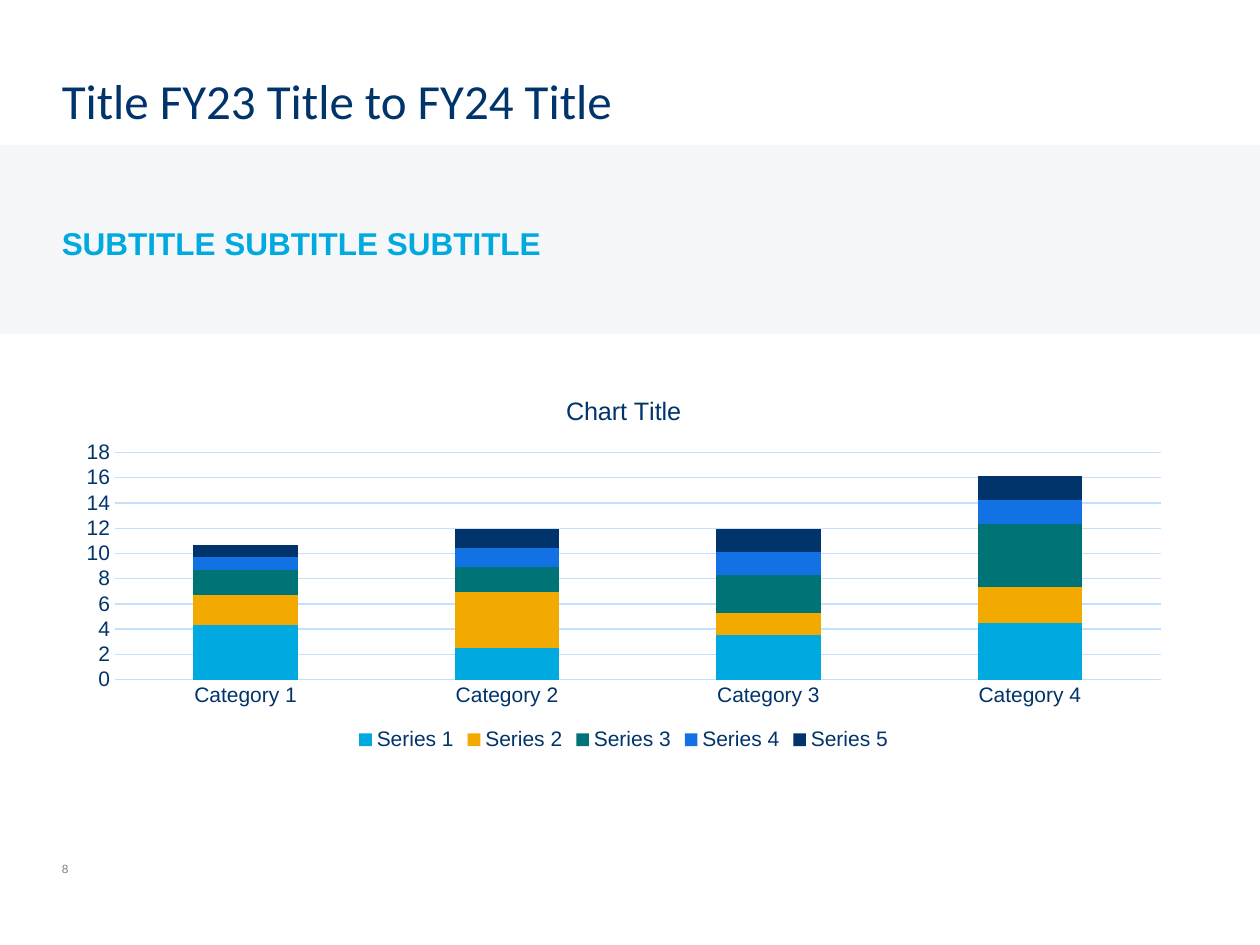
import pptx
import pptx.chart.data
import pptx.dml.color
import pptx.enum.chart
import pptx.enum.shapes
import pptx.enum.text
import pptx.util
from pptx.util import Inches

COLORS = {
    "navy": "00346B",
    "cyan": "00A9E0",
    "amber": "F2A900",
    "teal": "007377",
    "blue": "1271E3",
    "grid": "C3E0FF",
    "band": "F5F7F9",
    "gray": "808080",
}

CATEGORIES = ["Category 1", "Category 2", "Category 3", "Category 4"]
SERIES = [
    ("Series 1", (4.3, 2.5, 3.5, 4.5), "cyan"),
    ("Series 2", (2.4, 4.4, 1.8, 2.8), "amber"),
    ("Series 3", (2, 2, 3, 5), "teal"),
    ("Series 4", (1, 1.5, 1.8, 1.9), "blue"),
    ("Series 5", (1, 1.5, 1.8, 1.9), "navy"),
]


class SlideBuilder:
    """Holds the slide and its style, and adds each kind of element."""

    def __init__(self, slide, font="Arial"):
        self.slide = slide
        self.font = font

    def color(self, name):
        return pptx.dml.color.RGBColor.from_string(COLORS[name])

    def style_font(self, font, size, color, name=None, bold=False):
        font.name = name or self.font
        font.size = pptx.util.Pt(size)
        font.bold = bold
        font.color.rgb = self.color(color)

    def style_line(self, line):
        line.color.rgb = self.color("grid")
        line.width = pptx.util.Pt(0.75)

    def band(self, left, top, width, height, color):
        shape = self.slide.shapes.add_shape(
            pptx.enum.shapes.MSO_SHAPE.RECTANGLE,
            Inches(left), Inches(top), Inches(width), Inches(height))
        shape.shadow.inherit = False
        shape.fill.solid()
        shape.fill.fore_color.rgb = self.color(color)
        shape.line.fill.background()

    def text(self, text, left, top, width, height, size, color,
             name=None, bold=False, spacing=1.0):
        shape = self.slide.shapes.add_textbox(
            Inches(left), Inches(top), Inches(width), Inches(height))
        frame = shape.text_frame
        frame.word_wrap = True
        frame.vertical_anchor = pptx.enum.text.MSO_ANCHOR.MIDDLE
        frame.margin_left = frame.margin_right = 0
        frame.margin_top = frame.margin_bottom = 0
        frame.text = text
        paragraph = frame.paragraphs[0]
        paragraph.line_spacing = spacing
        self.style_font(paragraph.runs[0].font, size, color, name, bold)

    def stacked_chart(self, title, categories, series_rows, left, top, width, height):
        data = pptx.chart.data.CategoryChartData()
        data.categories = categories
        for name, values, _ in series_rows:
            data.add_series(name, values)
        chart = self.slide.shapes.add_chart(
            pptx.enum.chart.XL_CHART_TYPE.COLUMN_STACKED,
            Inches(left), Inches(top), Inches(width), Inches(height), data).chart
        self.style_font(chart.font, 12, "navy")

        chart.has_title = True
        chart.chart_title.include_in_layout = False
        chart.chart_title.text_frame.text = title
        title_run = chart.chart_title.text_frame.paragraphs[0].runs[0]
        self.style_font(title_run.font, 14.4, "navy")

        chart.has_legend = True
        chart.legend.position = pptx.enum.chart.XL_LEGEND_POSITION.BOTTOM
        chart.legend.include_in_layout = False
        self.style_font(chart.legend.font, 12, "navy")

        for axis in (chart.category_axis, chart.value_axis):
            axis.major_tick_mark = pptx.enum.chart.XL_TICK_MARK.NONE
            axis.minor_tick_mark = pptx.enum.chart.XL_TICK_MARK.NONE
            self.style_font(axis.tick_labels.font, 12, "navy")
        self.style_line(chart.category_axis.format.line)
        chart.value_axis.format.line.fill.background()
        chart.value_axis.has_major_gridlines = True
        self.style_line(chart.value_axis.major_gridlines.format.line)

        plot = chart.plots[0]
        plot.gap_width = 150
        plot.overlap = 100
        plot.vary_by_categories = False
        for series, (_, _, color) in zip(plot.series, series_rows):
            series.format.fill.solid()
            series.format.fill.fore_color.rgb = self.color(color)


def main():
    presentation = pptx.Presentation()
    presentation.slide_width = Inches(10)
    presentation.slide_height = Inches(7.5)
    builder = SlideBuilder(presentation.slides.add_slide(presentation.slide_layouts[6]))

    builder.band(0, 1.15, 10, 1.5, "band")
    builder.text("Title FY23 Title to FY24 Title", 0.49, 0.51, 8.88, 0.56,
                 28, "navy", name="Calibri")
    builder.text("SUBTITLE SUBTITLE SUBTITLE", 0.49, 1.48, 8.88, 0.83,
                 18, "cyan", bold=True, spacing=1.2)
    builder.stacked_chart("Chart Title", CATEGORIES, SERIES, 0.51, 2.99, 8.88, 3.01)
    builder.text("8", 0.49, 6.78, 2.25, 0.23, 6.8, "gray")

    presentation.save("out.pptx")


if __name__ == "__main__":
    main()
